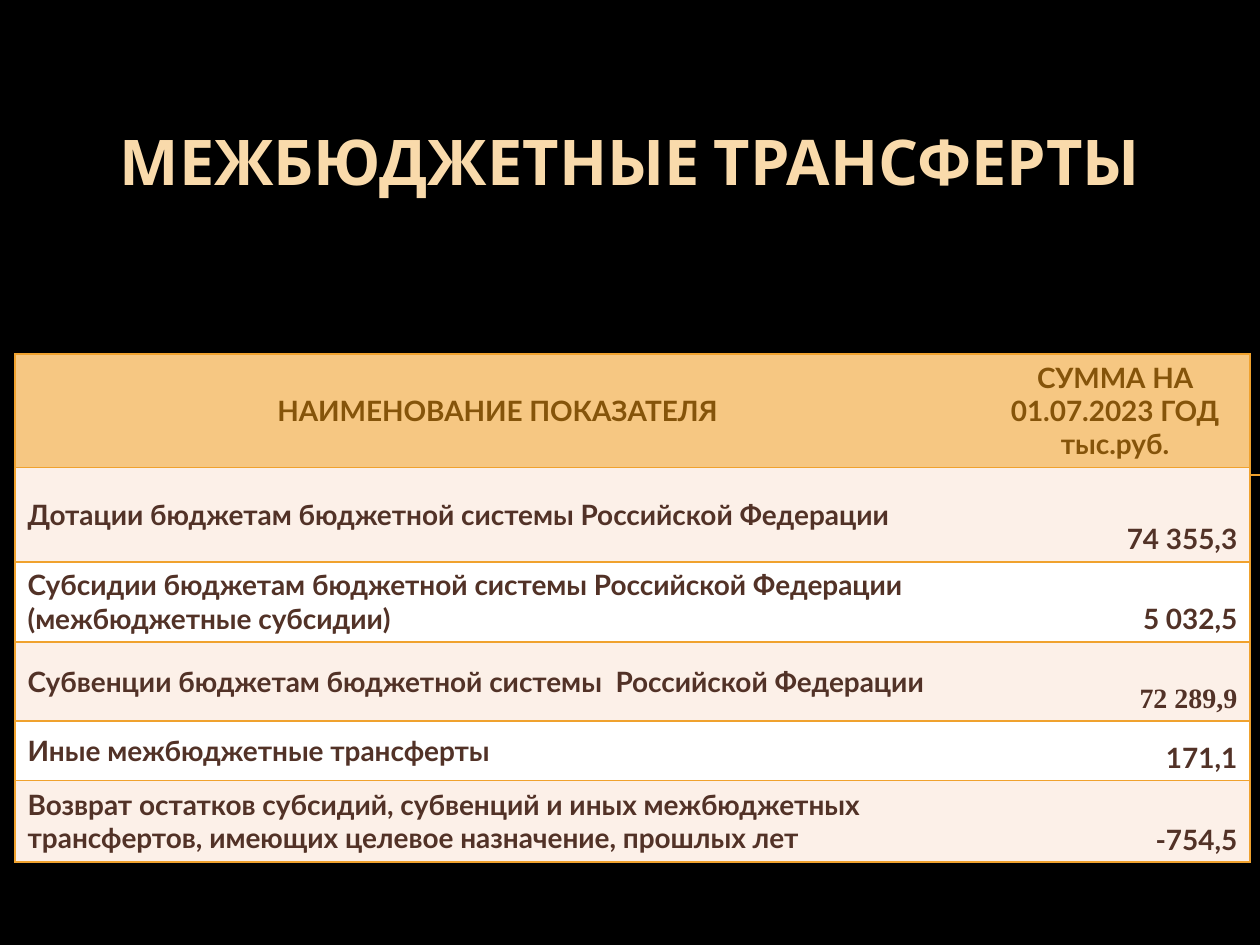
import lxml.etree
import pptx
import pptx.dml.color
import pptx.enum.shapes
import pptx.enum.text
import pptx.oxml.ns
import pptx.util

Inches, Pt = pptx.util.Inches, pptx.util.Pt
ALIGN = pptx.enum.text.PP_ALIGN
ANCHOR = pptx.enum.text.MSO_ANCHOR
qn = pptx.oxml.ns.qn

COLORS = {
    "background": "000000", "title": "F9DAAB", "rule": "F0A22E",
    "header_fill": "F6C782", "header_text": "85540A", "body_text": "523227",
    "odd_row": "FCF0E8", "even_row": "FFFFFF",
}
HEADINGS = ("НАИМЕНОВАНИЕ ПОКАЗАТЕЛЯ", "СУММА НА 01.07.2023 ГОД\nтыс.руб.")
TRANSFERS = [
    ("Дотации бюджетам бюджетной системы Российской Федерации", "74 355,3"),
    ("Субсидии бюджетам бюджетной системы Российской Федерации "
     "(межбюджетные субсидии)", "5 032,5"),
    ("Субвенции бюджетам бюджетной системы  Российской Федерации", "72 289,9"),
    ("Иные межбюджетные трансферты", "171,1"),
    ("Возврат остатков субсидий, субвенций и иных межбюджетных "
     "трансфертов, имеющих целевое назначение, прошлых лет", "-754,5"),
]
COLUMN_WIDTHS = (7.66, 2.14)
ROW_HEIGHTS = (0.9, 0.75, 0.63, 0.63, 0.47, 0.65)


def style_text(frame, font, size, color, align):
    for paragraph in frame.paragraphs:
        paragraph.alignment = align
        for run in paragraph.runs:
            run.font.name = font
            run.font.size = Pt(size)
            run.font.bold = True
            run.font.color.rgb = pptx.dml.color.RGBColor.from_string(COLORS[color])


def set_borders(cell, hidden_side):
    """Draw a 1 pt border on every side but the one between the columns."""
    properties = cell._tc.get_or_add_tcPr()
    for position, side in enumerate(("lnL", "lnR", "lnT", "lnB")):
        line = lxml.etree.Element(qn(f"a:{side}"), w=str(Pt(1)))
        if side == hidden_side:
            lxml.etree.SubElement(line, qn("a:noFill"))
        else:
            fill = lxml.etree.SubElement(line, qn("a:solidFill"))
            lxml.etree.SubElement(fill, qn("a:srgbClr"), val=COLORS["rule"])
        properties.insert(position, line)


deck = pptx.Presentation()
deck.slide_width, deck.slide_height = Inches(10), Inches(7.5)
slide = deck.slides.add_slide(deck.slide_layouts[6])
slide.background.fill.solid()
slide.background.fill.fore_color.rgb = pptx.dml.color.RGBColor.from_string(
    COLORS["background"])

rule = slide.shapes.add_connector(
    pptx.enum.shapes.MSO_CONNECTOR.STRAIGHT,
    Inches(0.56), Inches(3.77), Inches(10), Inches(3.77))
rule.line.color.rgb = pptx.dml.color.RGBColor.from_string(COLORS["rule"])
rule.line.width = Pt(0.75)
lxml.etree.SubElement(rule._element.spPr, qn("a:effectLst"))

title = slide.shapes.add_textbox(
    Inches(0), Inches(0.92), Inches(10), Inches(1.97)).text_frame
title.word_wrap = True
title.vertical_anchor = ANCHOR.TOP
title.text = "МЕЖБЮДЖЕТНЫЕ ТРАНСФЕРТЫ"
style_text(title, "Cabin", 36, "title", ALIGN.CENTER)

transfers = slide.shapes.add_table(
    len(ROW_HEIGHTS), len(COLUMN_WIDTHS), Inches(0.12), Inches(2.81),
    Inches(sum(COLUMN_WIDTHS)), Inches(sum(ROW_HEIGHTS))).table
for column, width in zip(transfers.columns, COLUMN_WIDTHS):
    column.width = Inches(width)
for row, height in zip(transfers.rows, ROW_HEIGHTS):
    row.height = Inches(height)

for r, texts in enumerate([HEADINGS] + TRANSFERS):
    for c, text in enumerate(texts):
        cell = transfers.cell(r, c)
        cell.text_frame.text = text
        if r == 0:
            fill, color, align = "header_fill", "header_text", ALIGN.CENTER
        else:
            fill = "odd_row" if r % 2 else "even_row"
            color, align = "body_text", ALIGN.RIGHT if c else ALIGN.LEFT
        font = "Times New Roman" if text == "72 289,9" else "Lato"
        style_text(cell.text_frame, font, 16, color, align)
        cell.vertical_anchor = ANCHOR.BOTTOM if r and c else ANCHOR.MIDDLE
        cell.fill.solid()
        cell.fill.fore_color.rgb = pptx.dml.color.RGBColor.from_string(COLORS[fill])
        set_borders(cell, "lnL" if c else "lnR")

deck.save("out.pptx")
